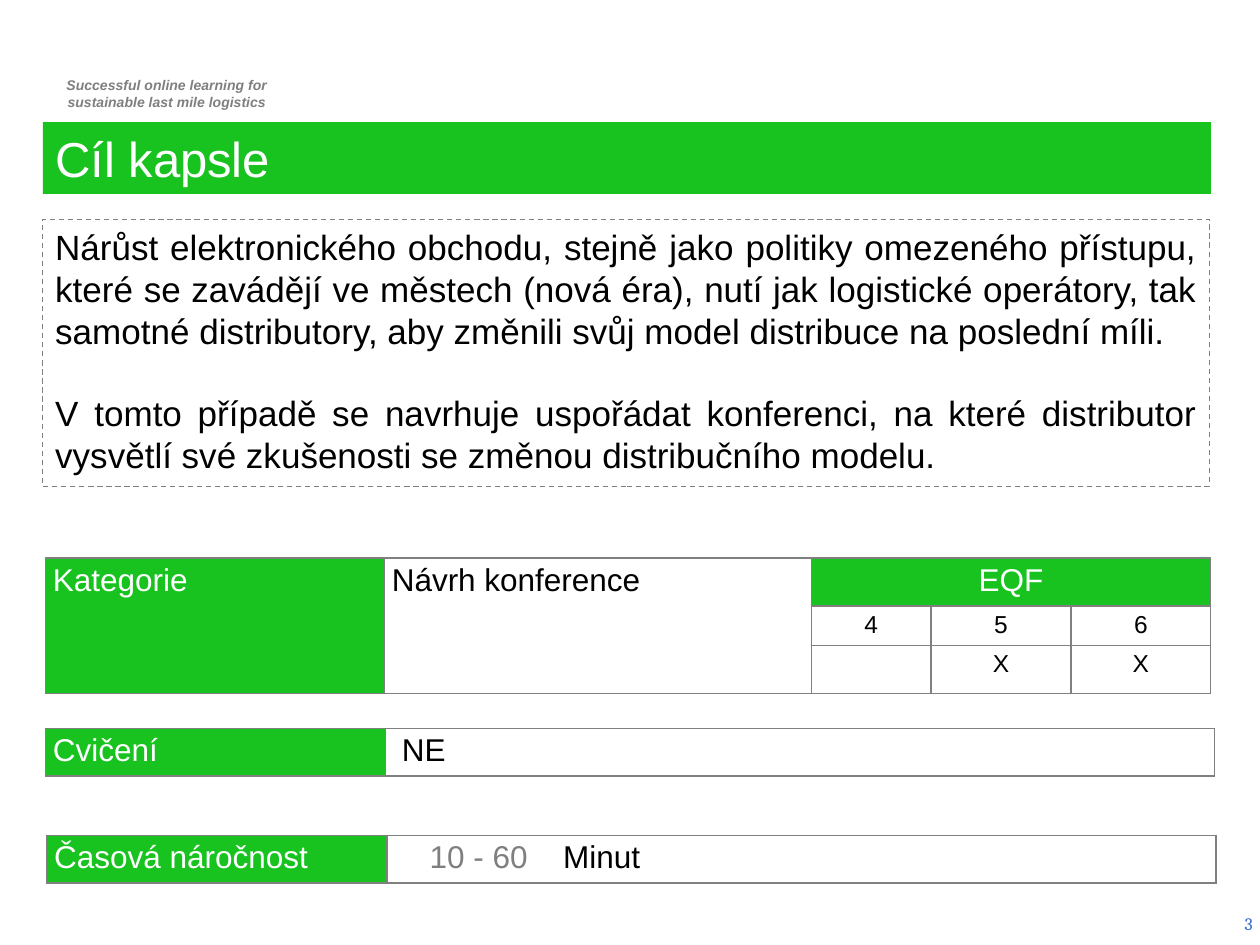
from dataclasses import dataclass

from lxml import etree
from pptx import Presentation
from pptx.dml.color import RGBColor
from pptx.enum import dml, shapes, text
from pptx.oxml import ns
from pptx.util import Inches, Pt

LEFT, MID, RIGHT, FULL = (text.PP_ALIGN.LEFT, text.PP_ALIGN.CENTER,
                          text.PP_ALIGN.RIGHT, text.PP_ALIGN.JUSTIFY)


@dataclass(frozen=True)
class Theme:
    green: str = "18C320"
    white: str = "FFFFFF"
    black: str = "000000"
    line: str = "808080"
    gray: str = "7F7F7F"
    blue: str = "3366CC"
    font: str = "Arial"
    serif: str = "Cambria"
    title: int = 28
    body: int = 20
    label: int = 18
    level: int = 14
    page: int = 10
    motto: int = 8


T = Theme()


def rgb(code):
    return RGBColor.from_string(code)


def style(font, size, color, name=T.font):
    font.size, font.name = Pt(size), name
    font.color.rgb = rgb(color)


def write(frame, lines, size, color, align=LEFT, name=T.font):
    """Fill a text frame with one styled paragraph per line."""
    frame.word_wrap = True
    frame.text = "\n".join(lines)
    for para in frame.paragraphs:
        para.alignment = align
        for run in para.runs:
            style(run.font, size, color, name)


def add_motto(slide, box):
    frame = slide.shapes.add_textbox(*map(Inches, box)).text_frame
    lines = ["Successful online learning for", "sustainable last mile logistics"]
    write(frame, lines, T.motto, T.gray, MID)
    for para in frame.paragraphs:
        para._p.get_or_add_pPr().set("marL", str(Inches(0.04)))
        for run in para.runs:
            run.font.bold = run.font.italic = True


def add_page(slide, box):
    frame = slide.shapes.add_textbox(*map(Inches, box)).text_frame
    frame.vertical_anchor = text.MSO_ANCHOR.MIDDLE
    write(frame, ["3"], T.page, T.blue, RIGHT, T.serif)


def add_rect(slide, box):
    rect = slide.shapes.add_shape(shapes.MSO_SHAPE.RECTANGLE, *map(Inches, box))
    rect.shadow.inherit = False
    rect.text_frame.vertical_anchor = text.MSO_ANCHOR.TOP
    return rect


def add_title(slide, box):
    bar = add_rect(slide, box)
    bar.fill.solid()
    bar.fill.fore_color.rgb = rgb(T.green)
    bar.line.fill.background()
    write(bar.text_frame, ["Cíl kapsle"], T.title, T.white)


def add_goal(slide, box):
    goal = add_rect(slide, box)
    goal.fill.background()
    goal.line.color.rgb = rgb(T.line)
    goal.line.width = Pt(0.75)
    goal.line.dash_style = dml.MSO_LINE.DASH
    lines = [
        "Nárůst elektronického obchodu, stejně jako politiky omezeného přístupu, "
        "které se zavádějí ve městech (nová éra), nutí jak logistické operátory, "
        "tak samotné distributory, aby změnili svůj model distribuce na poslední míli.",
        "V tomto případě se navrhuje uspořádat konferenci, na které distributor "
        "vysvětlí své zkušenosti se změnou distribučního modelu.",
    ]
    write(goal.text_frame, lines, T.body, T.black, FULL)
    goal.text_frame.paragraphs[1].space_before = Pt(23)


def edge(cell):
    """Draw a thin line on all four sides of a cell."""
    props = cell._tc.get_or_add_tcPr()
    for spot, side in enumerate(("lnL", "lnR", "lnT", "lnB")):
        line = etree.Element(ns.qn("a:" + side), w=str(Pt(1)))
        fill = etree.SubElement(line, ns.qn("a:solidFill"))
        etree.SubElement(fill, ns.qn("a:srgbClr"), val=T.line)
        props.insert(spot, line)


def add_grid(slide, spot, cols, rows):
    """Add a plain bordered table with its top left corner at spot."""
    size = sum(cols), sum(rows)
    grid = slide.shapes.add_table(len(rows), len(cols),
                                  *map(Inches, (*spot, *size))).table
    grid.first_row = grid.horz_banding = False
    for col, width in zip(grid.columns, cols):
        col.width = Inches(width)
    for row, height in zip(grid.rows, rows):
        row.height = Inches(height)
    for cell in grid.iter_cells():
        cell.margin_left = cell.margin_right = Inches(0.06)
        cell.margin_top = cell.margin_bottom = Inches(0.04)
        cell.fill.background()
        edge(cell)
    return grid


def put(cell, words, size=T.label, color=T.black, align=FULL):
    write(cell.text_frame, [words], size, color, align)


def put_head(cell, words, align=FULL):
    cell.fill.solid()
    cell.fill.fore_color.rgb = rgb(T.green)
    put(cell, words, color=T.white, align=align)


def add_kind(slide, spot):
    grid = add_grid(slide, spot, [2.69, 3.39, 0.95, 1.11, 1.11], [0.37, 0.31, 0.37])
    for col in (0, 1):
        grid.cell(0, col).merge(grid.cell(2, col))
    grid.cell(0, 2).merge(grid.cell(0, 4))
    put_head(grid.cell(0, 0), "Kategorie")
    put(grid.cell(0, 1), "Návrh konference")
    put_head(grid.cell(0, 2), "EQF", MID)
    for col, (level, mark) in enumerate([("4", ""), ("5", "X"), ("6", "X")], 2):
        put(grid.cell(1, col), level, T.level, align=MID)
        put(grid.cell(2, col), mark, T.level, align=MID)


def add_row(slide, spot, label, inset):
    """Add a label with an empty value cell, and return that cell."""
    grid = add_grid(slide, spot, [2.7, 6.58], [0.37])
    put_head(grid.cell(0, 0), label)
    value = grid.cell(0, 1)
    value.margin_left = Inches(inset)
    return value


def add_task(slide, spot):
    put(add_row(slide, spot, "Cvičení", 0.13), "NE")


def add_time(slide, spot):
    para = add_row(slide, spot, "Časová náročnost", 0.34).text_frame.paragraphs[0]
    tabs = etree.SubElement(para._p.get_or_add_pPr(), ns.qn("a:tabLst"))
    etree.SubElement(tabs, ns.qn("a:tab"), pos=str(Inches(1.06)), algn="l")
    for words, color in (("10 - 60\t", T.gray), ("Minut", T.black)):
        run = para.add_run()
        run.text = words
        style(run.font, T.label, color)


def main():
    deck = Presentation()
    deck.slide_width, deck.slide_height = Inches(10), Inches(7.5)
    slide = deck.slides.add_slide(deck.slide_layouts[6])
    add_motto(slide, (0.29, 0.56, 2.03, 0.37))
    add_page(slide, (7.71, 7.13, 2.33, 0.4))
    add_title(slide, (0.34, 0.97, 9.27, 0.57))
    add_goal(slide, (0.34, 1.74, 9.26, 2.12))
    add_kind(slide, (0.36, 4.43))
    add_task(slide, (0.36, 5.78))
    add_time(slide, (0.37, 6.63))
    deck.save("out.pptx")


if __name__ == "__main__":
    main()
